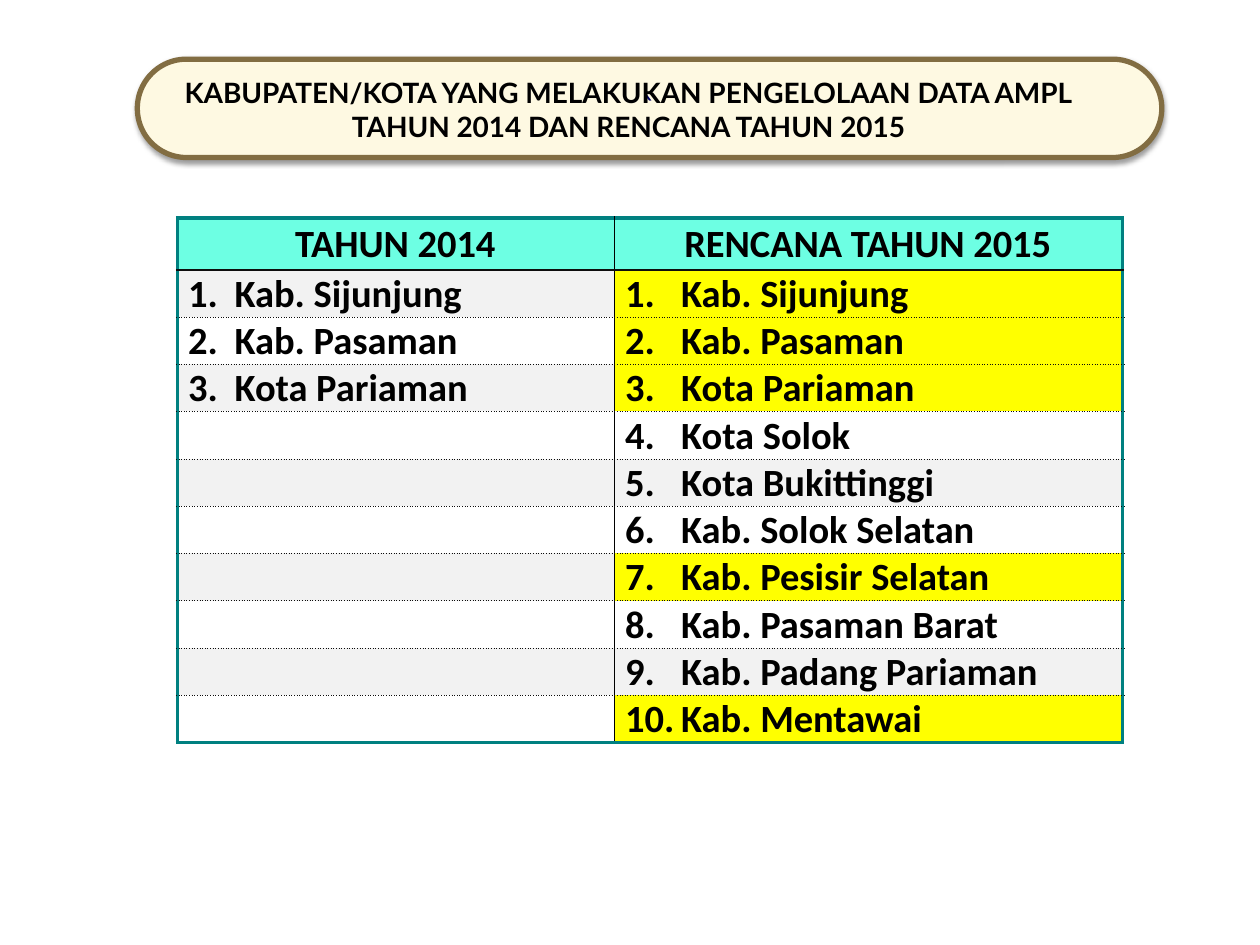
import pptx
import pptx.dml.color
import pptx.enum.shapes
import pptx.enum.text
import pptx.oxml
import pptx.oxml.ns
import pptx.util

Pt = pptx.util.Pt
RGBColor = pptx.dml.color.RGBColor
PP_ALIGN = pptx.enum.text.PP_ALIGN
MSO_ANCHOR = pptx.enum.text.MSO_ANCHOR

BLACK = RGBColor(0x00, 0x00, 0x00)
NEAR_BLACK = RGBColor(0x0D, 0x0D, 0x0D)
WHITE = RGBColor(0xFF, 0xFF, 0xFF)
GREY = RGBColor(0xF2, 0xF2, 0xF2)
YELLOW = RGBColor(0xFF, 0xFF, 0x00)
AQUA = RGBColor(0x6D, 0xFF, 0xE3)
TEAL = RGBColor(0x00, 0x80, 0x80)
CREAM = RGBColor(0xFE, 0xF9, 0xE2)
BRONZE = RGBColor(0x82, 0x6D, 0x42)
NAVY = RGBColor(0x00, 0x00, 0x66)

# Borders: colour, width in points, dash
FRAME = (TEAL, 2.25, "solid")
DIVIDER = (BLACK, 0.5, "solid")
HEADER_RULE = (NEAR_BLACK, 1.5, "solid")
DOTTED = (NEAR_BLACK, 0.25, "sysDot")

TITLE = [
    "KABUPATEN/KOTA YANG MELAKUKAN PENGELOLAAN DATA AMPL",
    "TAHUN 2014 DAN RENCANA TAHUN 2015",
]
HEADINGS = ["TAHUN 2014", "RENCANA TAHUN 2015"]
DONE_2014 = ["Kab. Sijunjung", "Kab. Pasaman", "Kota Pariaman"]
PLAN_2015 = DONE_2014 + [
    "Kota Solok", "Kota Bukittinggi", "Kab. Solok Selatan",
    "Kab. Pesisir Selatan", "Kab. Pasaman Barat",
    "Kab. Padang Pariaman", "Kab. Mentawai",
]
HIGHLIGHTED = DONE_2014 + ["Kab. Pesisir Selatan", "Kab. Mentawai"]


def add_xml(parent, tag, **attributes):
    element = pptx.oxml.ns.qn(tag)
    child = parent.makeelement(element, attributes)
    parent.append(child)
    return child


class SlideBuilder:
    title_font = "Lato"
    table_font = "Calibri"

    def __init__(self, slide):
        self.slide = slide

    def format_paragraph(self, para, font, size, color, bold=True, align=PP_ALIGN.CENTER):
        para.alignment = align
        for span in para.runs:
            span.font.name = font
            span.font.size = Pt(size)
            span.font.bold = bold
            span.font.color.rgb = color

    def pill(self, left, top, width, height, text):
        shape = self.slide.shapes.add_shape(
            pptx.enum.shapes.MSO_SHAPE.ROUNDED_RECTANGLE,
            Pt(left), Pt(top), Pt(width), Pt(height))
        shape.adjustments[0] = 0.5
        shape.fill.solid()
        shape.fill.fore_color.rgb = CREAM
        shape.line.color.rgb = BRONZE
        shape.line.width = Pt(3)
        shape.shadow.inherit = False
        effects = shape._element.spPr.find(pptx.oxml.ns.qn("a:effectLst"))
        shadow = add_xml(effects, "a:outerShdw", blurRad=str(Pt(3.1)),
                         dist=str(Pt(1.6)), dir="5400000", rotWithShape="0")
        tint = add_xml(shadow, "a:srgbClr", val=str(BLACK))
        add_xml(tint, "a:alpha", val="38000")
        frame = shape.text_frame
        frame.word_wrap = False
        frame.vertical_anchor = MSO_ANCHOR.MIDDLE
        frame.text = text
        self.format_paragraph(frame.paragraphs[0], "DejaVu Sans", 18, NAVY, bold=False)

    def heading(self, left, top, width, height, lines):
        box = self.slide.shapes.add_textbox(Pt(left), Pt(top), Pt(width), Pt(height))
        frame = box.text_frame
        frame.word_wrap = True
        frame.text = "\n".join(lines)
        for para in frame.paragraphs:
            self.format_paragraph(para, self.title_font, 16, BLACK)

    def table(self, left, top, widths, heights):
        frame = self.slide.shapes.add_table(
            len(heights), len(widths), Pt(left), Pt(top), Pt(sum(widths)), Pt(sum(heights)))
        table = frame.table
        table.first_row = table.horz_banding = False
        for column, width in zip(table.columns, widths):
            column.width = Pt(width)
        for row, height in zip(table.rows, heights):
            row.height = Pt(height)
        return table

    def cell(self, cell, text, fill, borders, align=PP_ALIGN.LEFT,
             anchor=MSO_ANCHOR.TOP, hanging=0):
        cell.margin_left, cell.margin_right = Pt(6), Pt(7)
        cell.margin_top, cell.margin_bottom = Pt(0.6), Pt(0)
        cell.vertical_anchor = anchor
        properties = cell._tc.get_or_add_tcPr()
        for side, (color, width, dash) in zip("LRTB", borders):
            line = add_xml(properties, f"a:ln{side}", w=str(Pt(width)))
            paint = add_xml(line, "a:solidFill")
            add_xml(paint, "a:srgbClr", val=str(color))
            add_xml(line, "a:prstDash", val=dash)
        cell.fill.solid()
        cell.fill.fore_color.rgb = fill
        cell.text_frame.text = text
        para = cell.text_frame.paragraphs[0]
        if hanging:
            indent = para._p.get_or_add_pPr()
            indent.set("marL", str(Pt(hanging)))
            indent.set("indent", str(-Pt(hanging)))
        self.format_paragraph(para, self.table_font, 22, BLACK, align=align)


def main():
    deck = pptx.Presentation()
    deck.slide_width, deck.slide_height = Pt(720), Pt(540)
    page = SlideBuilder(deck.slides.add_slide(deck.slide_layouts[6]))

    # Title on its pill
    page.pill(78.5, 33.8, 585.4, 56.2, "`")
    page.heading(83.5, 39.6, 551.5, 46, TITLE)

    # Table: header row, then one row per planned region
    row_count = len(PLAN_2015)
    table = page.table(101.5, 124.6, [249.8, 290.2], [29.5] + [26.8] * row_count)
    sides = [(FRAME, DIVIDER), (DIVIDER, FRAME)]
    for column, text in enumerate(HEADINGS):
        page.cell(table.cell(0, column), text, AQUA,
                  (*sides[column], FRAME, HEADER_RULE),
                  align=PP_ALIGN.CENTER, anchor=MSO_ANCHOR.MIDDLE)

    # Numbered regions, banded, with highlights in the plan column
    for column, (regions, hanging) in enumerate([(DONE_2014, 26.6), (PLAN_2015, 32)]):
        for number in range(1, row_count + 1):
            region = regions[number - 1] if number <= len(regions) else ""
            fill = GREY if number % 2 else WHITE
            if column == 1 and region in HIGHLIGHTED:
                fill = YELLOW
            above = HEADER_RULE if number == 1 else DOTTED
            below = FRAME if number == row_count else DOTTED
            page.cell(table.cell(number, column), f"{number}.\t{region}" if region else "",
                      fill, (*sides[column], above, below), hanging=hanging)

    deck.save("out.pptx")


if __name__ == "__main__":
    main()
